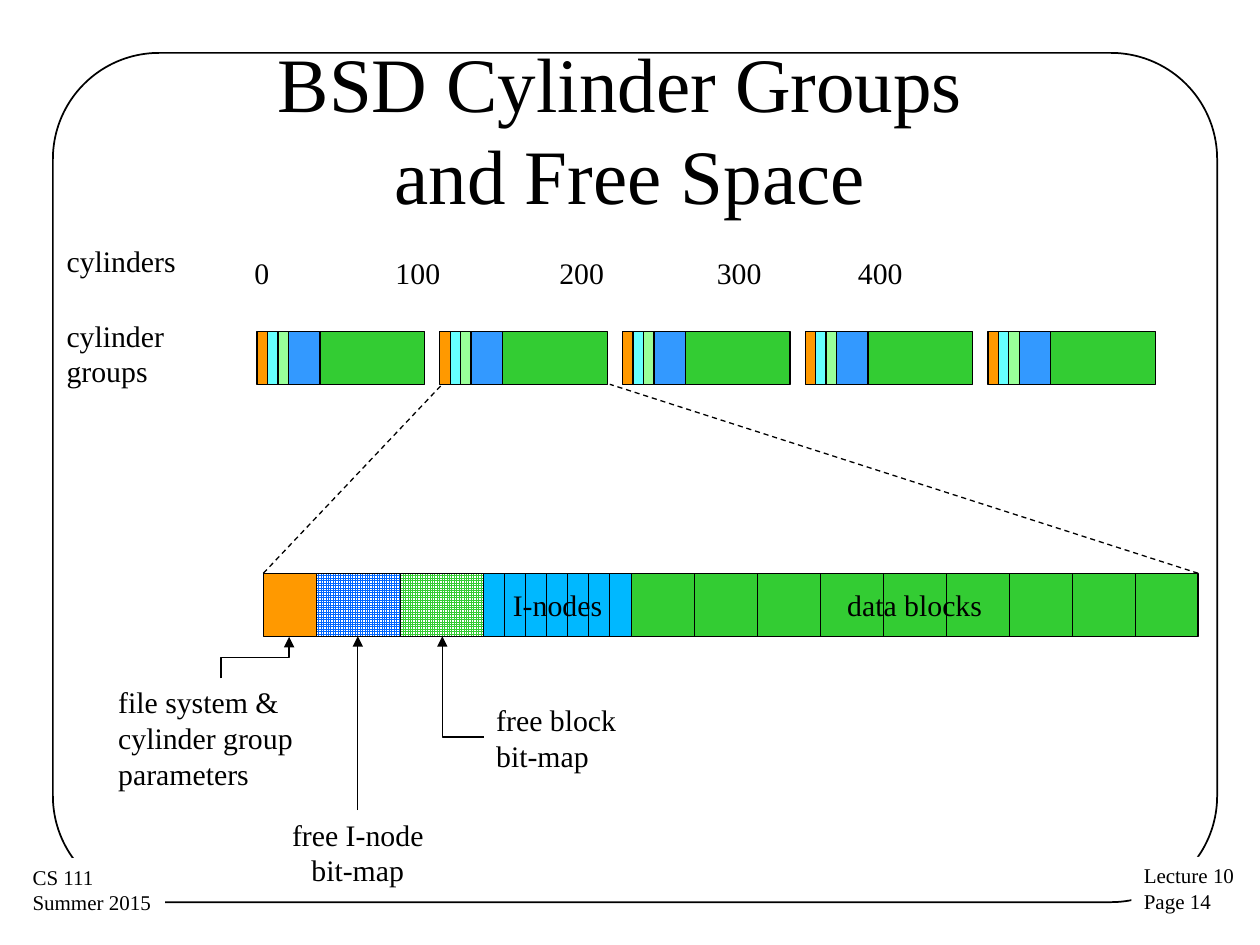
from lxml import etree
from pptx import Presentation
from pptx.dml.color import RGBColor
from pptx.enum.dml import MSO_LINE, MSO_PATTERN
from pptx.enum.shapes import MSO_CONNECTOR, MSO_SHAPE
from pptx.enum.text import MSO_ANCHOR, PP_ALIGN
from pptx.oxml.ns import qn
from pptx.util import Inches, Pt

BLACK = RGBColor(0x00, 0x00, 0x00)
WHITE = RGBColor(0xFF, 0xFF, 0xFF)
ORANGE = RGBColor(0xFF, 0x99, 0x00)
CYAN = RGBColor(0x66, 0xFF, 0xFF)
MINT = RGBColor(0x99, 0xFF, 0x99)
BLUE = RGBColor(0x33, 0x99, 0xFF)
GREEN = RGBColor(0x33, 0xCC, 0x33)
SKY = RGBColor(0x00, 0xB8, 0xFF)
GRID_BLUE = RGBColor(0x00, 0x66, 0xFF)
FONT = "Times New Roman"
LEFT, CENTER = PP_ALIGN.LEFT, PP_ALIGN.CENTER
MIDDLE = MSO_ANCHOR.MIDDLE
RECT, ROUNDED = MSO_SHAPE.RECTANGLE, MSO_SHAPE.ROUNDED_RECTANGLE
STRAIGHT, ELBOW = MSO_CONNECTOR.STRAIGHT, MSO_CONNECTOR.ELBOW
SMALL_GRID = MSO_PATTERN.SMALL_GRID
DASH = MSO_LINE.DASH


def write(frame, text, size=17, align=LEFT):
    frame.text = text
    for paragraph in frame.paragraphs:
        paragraph.alignment = align
        for run in paragraph.runs:
            run.font.size = Pt(size)
            run.font.name = FONT
            run.font.color.rgb = BLACK


def add_box(slide, box, fill=None, line_width=0.75, kind=RECT, grid=False):
    shape = slide.shapes.add_shape(kind, *map(Inches, box))
    shape.shadow.inherit = False
    if grid:
        shape.fill.patterned()
        shape.fill.pattern = SMALL_GRID
        shape.fill.fore_color.rgb = fill
        shape.fill.back_color.rgb = WHITE
    elif fill is not None:
        shape.fill.solid()
        shape.fill.fore_color.rgb = fill
    else:
        shape.fill.background()
    if line_width:
        shape.line.color.rgb = BLACK
        shape.line.width = Pt(line_width)
    else:
        shape.line.fill.background()
    return shape


def add_label(slide, box, text, align=LEFT):
    label = slide.shapes.add_textbox(*map(Inches, box))
    label.text_frame.word_wrap = True
    write(label.text_frame, text, align=align)
    return label


def add_line(slide, start, end, kind=STRAIGHT, dashed=False, arrow=False):
    line = slide.shapes.add_connector(kind, *map(Inches, (*start, *end)))
    line.line.color.rgb = BLACK
    line.line.width = Pt(0.75)
    if dashed:
        line.line.dash_style = DASH
    properties = line._element.spPr
    if arrow:
        outline = properties.find(qn("a:ln"))
        etree.SubElement(outline, qn("a:tailEnd"), type="triangle")
    etree.SubElement(properties, qn("a:effectLst"))
    return line


def turn(connector, degrees):
    transform = connector._element.spPr.find(qn("a:xfrm"))
    transform.set("rot", str(degrees * 60000))


def add_page_frame(slide, box):
    frame = add_box(slide, box, line_width=1, kind=ROUNDED)
    frame.adjustments[0] = 0.125
    footers = [((8.98, 6.8, 0.93, 0.51), "Lecture 10\nPage 14"),
               ((0.16, 6.81, 1.15, 0.51), "CS 111\nSummer 2015")]
    for footer_box, text in footers:
        footer = add_box(slide, footer_box, WHITE, line_width=0)
        footer.text_frame.word_wrap = False
        footer.text_frame.vertical_anchor = MSO_ANCHOR.TOP
        write(footer.text_frame, text, 12)


def add_title(slide, box):
    title = slide.shapes.title
    title.left, title.top, title.width, title.height = map(Inches, box)
    title.text_frame.vertical_anchor = MIDDLE
    write(title.text_frame, "BSD Cylinder Groups \vand Free Space", 44, CENTER)


def add_cylinder_numbers(slide, box):
    numbers = add_label(slide, box, "0\t100\t200\t300\t400")
    properties = numbers.text_frame.paragraphs[0]._p.get_or_add_pPr()
    tabs = etree.SubElement(properties, qn("a:tabLst"))
    for stop in (1.12, 2.42, 3.67, 4.79):
        etree.SubElement(tabs, qn("a:tab"), pos=str(Inches(stop)), algn="l")


def add_cylinder_groups(slide, box, count=5, pitch=1.45):
    left, top, width, height = box
    unit = width / 16
    segments = [(1, ORANGE), (1, CYAN), (1, MINT), (3, BLUE), (10, GREEN)]
    for group in range(count):
        x = left + group * pitch
        for units, color in segments:
            add_box(slide, (x, top, units * unit, height), color)
            x += units * unit


def add_group_detail(slide, box):
    left, top, width, height = box
    bottom = top + height
    # Width, colour, grid pattern, text, number of dividers, divider gap
    parts = [(0.42, ORANGE, False, "", 0, 0),
             (0.67, GRID_BLUE, True, "", 0, 0),
             (0.66, GREEN, True, "", 0, 0),
             (1.17, SKY, False, "I-nodes", 6, 1 / 6),
             (4.5, GREEN, False, "data blocks", 8, 0.5)]
    x = left
    for part_width, color, grid, text, dividers, gap in parts:
        part = add_box(slide, (x, top, part_width, height), color, grid=grid)
        if text:
            part.text_frame.word_wrap = False
            part.text_frame.vertical_anchor = MIDDLE
            write(part.text_frame, text, align=CENTER)
        for i in range(1, dividers + 1):
            add_line(slide, (x + i * gap, top), (x + i * gap, bottom))
        x += part_width

    # Captions below the bar
    add_label(slide, (left - 1.25, bottom + 0.33, 1.83, 0.96),
              "file system & cylinder group parameters")
    add_label(slide, (left + 1.75, bottom + 0.47, 1.5, 0.67),
              "free block bit-map")
    add_label(slide, (left, bottom + 1.38, 1.5, 0.67),
              "free I-node bit-map", CENTER)

    # Arrows from the captions to their parts
    parameters = add_line(slide, (left + 0.1, bottom + 0.44),
                          (left - 0.23, bottom - 0.1), ELBOW, arrow=True)
    turn(parameters, 90)
    free_blocks = add_line(slide, (left + 1.42, bottom),
                           (left + 1.75, bottom + 0.8), ELBOW, arrow=True)
    free_blocks._element.spPr.find(qn("a:prstGeom")).set("prst", "bentConnector2")
    turn(free_blocks, 180)
    add_line(slide, (left + 0.75, bottom + 1.38), (left + 0.75, bottom), arrow=True)


def main():
    deck = Presentation()
    deck.slide_width, deck.slide_height = Inches(10), Inches(7.5)
    slide = deck.slides.add_slide(deck.slide_layouts[5])

    add_page_frame(slide, (0.42, 0.42, 9.24, 6.74))
    add_title(slide, (0.5, 0.39, 9, 1.25))
    add_group_detail(slide, (2.09, 4.55, 7.42, 0.5))
    add_cylinder_groups(slide, (2.04, 2.63, 1.33, 0.42))

    # Row labels and cylinder numbers
    add_label(slide, (0.43, 1.88, 1.25, 0.38), "cylinders")
    add_label(slide, (0.43, 2.47, 1.5, 0.67), "cylinder groups")
    add_cylinder_numbers(slide, (1.92, 1.97, 7.25, 0.38))

    # Zoom lines from the second group to its detail
    add_line(slide, (2.09, 4.55), (3.51, 3.05), dashed=True)
    add_line(slide, (9.51, 4.55), (4.84, 3.05), dashed=True)

    deck.save("out.pptx")


if __name__ == "__main__":
    main()
